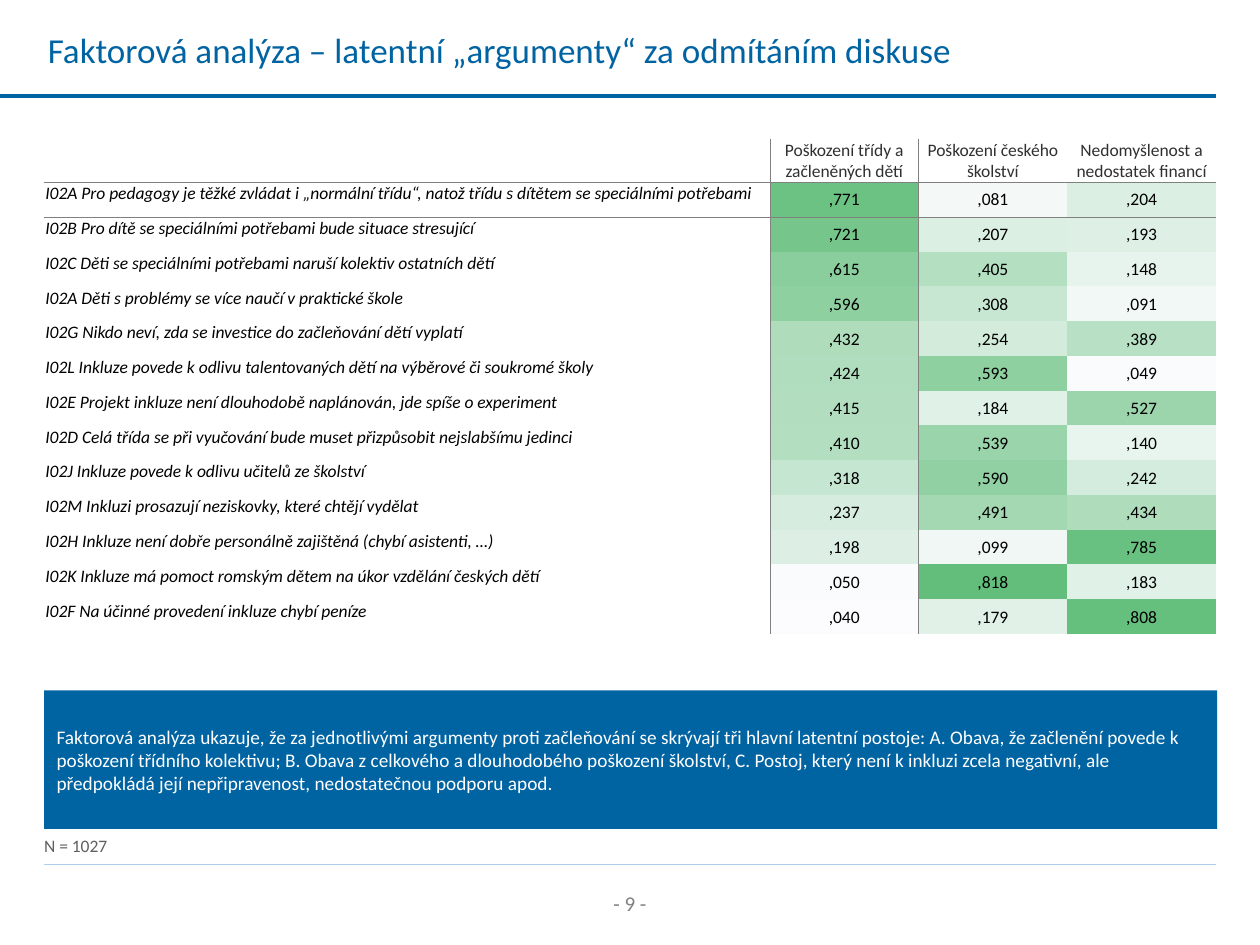
from dataclasses import dataclass

from lxml import etree
from pptx import Presentation
from pptx import util as u
from pptx.dml.color import RGBColor
from pptx.enum import shapes, text
from pptx.oxml import ns


@dataclass(frozen=True)
class Theme:
    font: str = "Calibri"
    blue: str = "0063A2"
    pale_blue: str = "AFCFEA"
    white: str = "FFFFFF"
    black: str = "000000"
    header: str = "303030"
    note: str = "5F5F5F"
    grey: str = "808080"
    scale_low: str = "FCFCFF"
    scale_high: str = "63BE7B"
    title_size: int = 20
    page_size: int = 12
    body_size: int = 11
    small_size: int = 10


@dataclass(frozen=True)
class Box:
    left: float
    top: float
    width: float
    height: float

    def lengths(self) -> list[u.Length]:
        return [u.Inches(n) for n in (self.left, self.top, self.width, self.height)]


@dataclass(frozen=True)
class Rule:
    left: float
    right: float
    top: float
    color: str
    points: float


@dataclass(frozen=True)
class Item:
    label: str
    loadings: tuple[int, int, int]


THEME = Theme()
MARGIN = 0.35
HEADERS = (
    "Poškození třídy a začleněných dětí",
    "Poškození českého školství",
    "Nedomyšlenost a nedostatek financí",
)
ITEMS = (
    Item("I02A Pro pedagogy je těžké zvládat i „normální třídu“, natož třídu s dítětem se speciálními potřebami", (771, 81, 204)),
    Item("I02B Pro dítě se speciálními potřebami bude situace stresující", (721, 207, 193)),
    Item("I02C Děti se speciálními potřebami naruší kolektiv ostatních dětí", (615, 405, 148)),
    Item("I02A Děti s problémy se více naučí v praktické škole", (596, 308, 91)),
    Item("I02G Nikdo neví, zda se investice do začleňování dětí vyplatí", (432, 254, 389)),
    Item("I02L Inkluze povede k odlivu talentovaných dětí na výběrové či soukromé školy", (424, 593, 49)),
    Item("I02E Projekt inkluze není dlouhodobě naplánován, jde spíše o experiment", (415, 184, 527)),
    Item("I02D Celá třída se při vyučování bude muset přizpůsobit nejslabšímu jedinci", (410, 539, 140)),
    Item("I02J Inkluze povede k odlivu učitelů ze školství", (318, 590, 242)),
    Item("I02M Inkluzi prosazují neziskovky, které chtějí vydělat", (237, 491, 434)),
    Item("I02H Inkluze není dobře personálně zajištěná (chybí asistenti, …)", (198, 99, 785)),
    Item("I02K Inkluze má pomoct romským dětem na úkor vzdělání českých dětí", (50, 818, 183)),
    Item("I02F Na účinné provedení inkluze chybí peníze", (40, 179, 808)),
)
CONCLUSION = (
    "Faktorová analýza ukazuje, že za jednotlivými argumenty proti začleňování se skrývají "
    "tři hlavní latentní postoje: A. Obava, že začlenění povede k poškození třídního kolektivu; "
    "B. Obava z celkového a dlouhodobého poškození školství, C. Postoj, který není k inkluzi "
    "zcela negativní, ale předpokládá její nepřipravenost, nedostatečnou podporu apod."
)


def rgb(color: str) -> RGBColor:
    return RGBColor.from_string(color)


def heat_color(loading: int) -> RGBColor:
    loadings = [value for item in ITEMS for value in item.loadings]
    low, high = min(loadings), max(loadings)
    share = (loading - low) / (high - low)
    ends = zip(rgb(THEME.scale_low), rgb(THEME.scale_high))
    return RGBColor(*(round(start + (end - start) * share) for start, end in ends))


def write(frame, words: str, size: int, color: str, centered: bool = False, italic: bool = False) -> None:
    paragraph = frame.paragraphs[0]
    paragraph.alignment = text.PP_ALIGN.CENTER if centered else text.PP_ALIGN.LEFT
    run = paragraph.add_run()
    run.text = words
    run.font.name = THEME.font
    run.font.size = u.Pt(size)
    run.font.color.rgb = rgb(color)
    run.font.italic = italic


def add_rule(slide, rule: Rule) -> None:
    ends = (rule.left, rule.top, rule.right, rule.top)
    connector = slide.shapes.add_connector(
        shapes.MSO_CONNECTOR.STRAIGHT, *(u.Inches(n) for n in ends)
    )
    connector.line.color.rgb = rgb(rule.color)
    connector.line.width = u.Pt(rule.points)
    etree.SubElement(connector._element.spPr, ns.qn("a:effectLst"))


def add_title(slide, box: Box, words: str) -> None:
    title = slide.shapes.title
    title.left, title.top, title.width, title.height = box.lengths()
    title.text_frame.auto_size = text.MSO_AUTO_SIZE.NONE
    title.text_frame.vertical_anchor = text.MSO_ANCHOR.MIDDLE
    write(title.text_frame, words, THEME.title_size, THEME.blue)


def add_label(slide, box: Box, words: str, size: int, color: str, inset: float = 0.1, centered: bool = False) -> None:
    frame = slide.shapes.add_textbox(*box.lengths()).text_frame
    frame.word_wrap = True
    frame.margin_left = u.Inches(inset)
    write(frame, words, size, color, centered)


def add_conclusion(slide, box: Box) -> None:
    shape = slide.shapes.add_shape(shapes.MSO_SHAPE.RECTANGLE, *box.lengths())
    shape.shadow.inherit = False
    shape.fill.solid()
    shape.fill.fore_color.rgb = rgb(THEME.blue)
    shape.line.fill.background()
    shape.text_frame.word_wrap = True
    shape.text_frame.vertical_anchor = text.MSO_ANCHOR.MIDDLE
    write(shape.text_frame, CONCLUSION, THEME.body_size, THEME.white)


def add_borders(cell, row: int, column: int) -> None:
    sides = {"lnL": column == 1, "lnR": column == 0, "lnT": row == 1, "lnB": row == 0}
    properties = cell._tc.get_or_add_tcPr()
    for side, visible in sides.items():
        if visible:
            line = etree.SubElement(properties, ns.qn(f"a:{side}"), w=str(u.Pt(0.25)))
            fill = etree.SubElement(line, ns.qn("a:solidFill"))
            etree.SubElement(fill, ns.qn("a:srgbClr"), val=THEME.grey)


def prepare_cell(cell, row: int, column: int) -> None:
    cell.margin_left = cell.margin_right = cell.margin_top = u.Inches(0.01)
    cell.margin_bottom = 0
    add_borders(cell, row, column)
    cell.fill.background()
    if column:
        cell.vertical_anchor = text.MSO_ANCHOR.MIDDLE


def add_loadings_table(slide, box: Box, header_height: float, label_width: float) -> None:
    row_count, column_count = len(ITEMS) + 1, len(HEADERS) + 1
    table = slide.shapes.add_table(row_count, column_count, *box.lengths()).table
    table.first_row = table.horz_banding = False
    table._tbl.tblPr.find(ns.qn("a:tableStyleId")).text = "{2D5ABB26-0587-4C30-8999-92F81FD0307C}"
    for index, column in enumerate(table.columns):
        column.width = u.Inches((box.width - label_width) / len(HEADERS) if index else label_width)
    for index, row in enumerate(table.rows):
        row.height = u.Inches((box.height - header_height) / len(ITEMS) if index else header_height)
        for position, cell in enumerate(row.cells):
            prepare_cell(cell, index, position)
    for position, header in enumerate(HEADERS, 1):
        write(table.cell(0, position).text_frame, header, THEME.small_size, THEME.header, centered=True)
    for index, item in enumerate(ITEMS, 1):
        write(table.cell(index, 0).text_frame, item.label, THEME.small_size, THEME.black, italic=True)
        for position, loading in enumerate(item.loadings, 1):
            cell = table.cell(index, position)
            cell.fill.solid()
            cell.fill.fore_color.rgb = heat_color(loading)
            write(cell.text_frame, f",{loading:03d}", THEME.small_size, THEME.black, centered=True)


def main() -> None:
    presentation = Presentation()
    presentation.slide_width, presentation.slide_height = u.Inches(10), u.Inches(7.5)
    slide = presentation.slides.add_slide(presentation.slide_layouts[5])
    add_rule(slide, Rule(MARGIN, 9.65, 6.86, THEME.pale_blue, 0.5))
    add_label(slide, Box(4.37, 7.02, 1.26, 0.3), "- 9 -", THEME.page_size, THEME.grey, centered=True)
    add_rule(slide, Rule(0, 9.65, 0.76, THEME.blue, 2.25))
    add_title(slide, Box(0.28, 0, 8.92, 0.79), "Faktorová analýza – latentní „argumenty“ za odmítáním diskuse")
    add_conclusion(slide, Box(MARGIN, 5.48, 9.31, 1.1))
    add_loadings_table(slide, Box(MARGIN, 1.1, 9.3, 3.93), header_height=0.34, label_width=5.76)
    add_label(slide, Box(MARGIN, 6.58, 9.31, 0.27), "N = 1027", THEME.small_size, THEME.note, inset=0)
    presentation.save("out.pptx")


if __name__ == "__main__":
    main()
